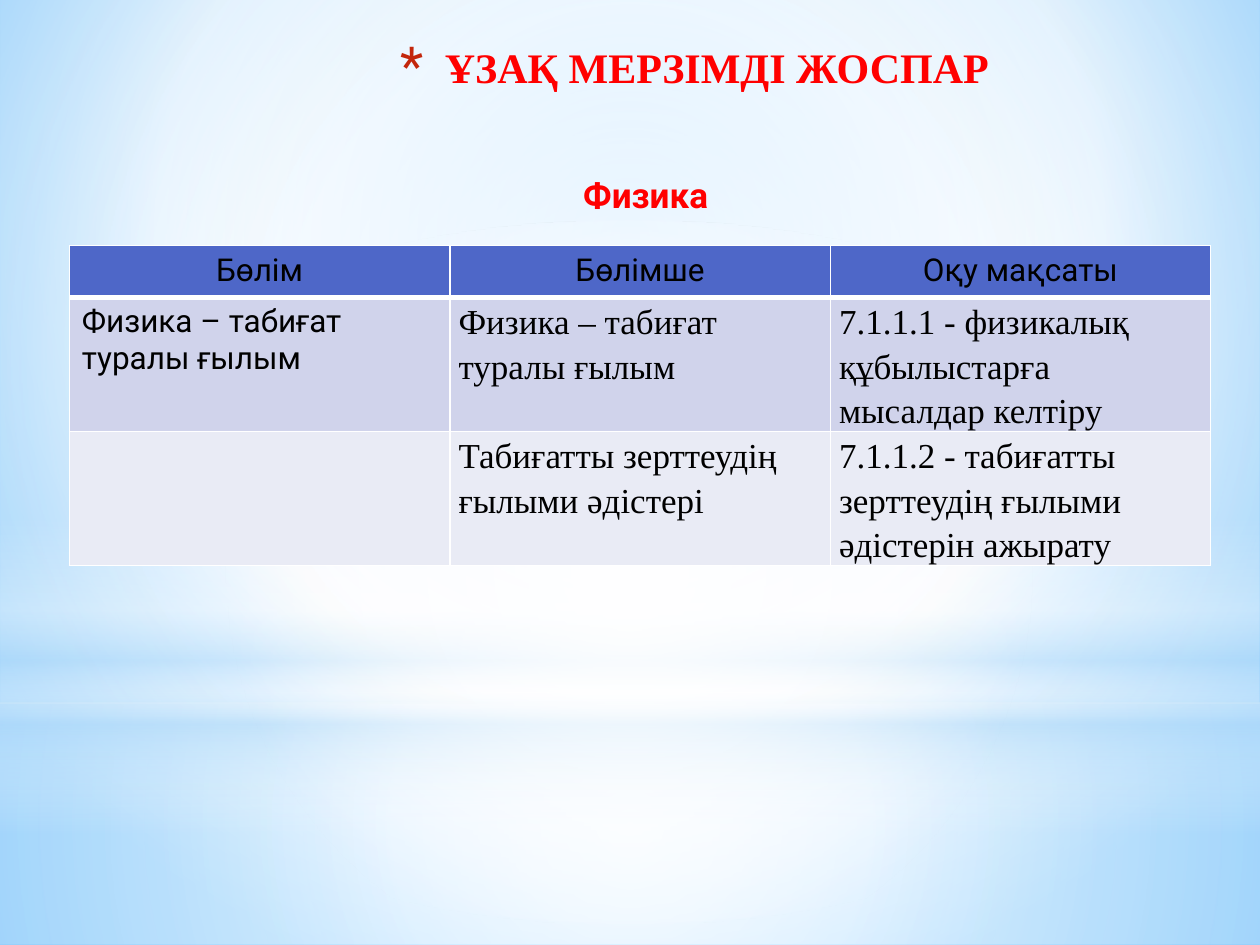
from dataclasses import dataclass
from typing import Optional

from lxml import etree
from pptx import Presentation
from pptx.dml.color import RGBColor
from pptx.enum.shapes import MSO_SHAPE
from pptx.enum.text import MSO_ANCHOR, MSO_AUTO_SIZE, PP_ALIGN
from pptx.oxml import parse_xml
from pptx.oxml.ns import nsdecls, qn
from pptx.util import Inches, Pt

RECTANGLE = MSO_SHAPE.RECTANGLE
OVAL = MSO_SHAPE.OVAL
CENTER = PP_ALIGN.CENTER
LEFT = PP_ALIGN.LEFT
TOP = MSO_ANCHOR.TOP
NO_AUTOFIT = MSO_AUTO_SIZE.NONE

SKY = RGBColor(0x9E, 0xD5, 0xFF)
DEEP_SKY = RGBColor(0x5B, 0xB9, 0xFF)
HAZE = RGBColor(0xB4, 0xDC, 0xFA)
WHITE = RGBColor(0xFF, 0xFF, 0xFF)
BLACK = RGBColor(0x00, 0x00, 0x00)
RED = RGBColor(0xFF, 0x00, 0x00)
BULLET_RED = RGBColor(0xC3, 0x26, 0x0C)
HEADER_BLUE = RGBColor(0x4E, 0x67, 0xC8)
BAND_DARK = RGBColor(0xD0, 0xD3, 0xEB)
BAND_LIGHT = RGBColor(0xE9, 0xEB, 0xF5)

SANS = "Roboto"
SERIF = "Times New Roman"


@dataclass(frozen=True)
class Stop:
    position: int
    color: RGBColor
    opacity: int = 100


@dataclass(frozen=True)
class Gradient:
    stops: tuple[Stop, ...]
    focus: Optional[tuple[int, int, int, int]] = (50, 50, 50, 50)


@dataclass(frozen=True)
class Glow:
    preset: MSO_SHAPE
    top: float
    height: float
    gradient: Gradient


@dataclass(frozen=True)
class CellStyle:
    font: str
    size: int
    align: PP_ALIGN = LEFT
    spacing: float = 1.0
    margin_x: float = 0.1
    margin_y: float = 0.05


BACKDROP = Gradient((Stop(0, SKY), Stop(60, WHITE), Stop(100, DEEP_SKY)), (20, 10, 20, 60))
GLOWS = (
    Glow(RECTANGLE, 5.58, 1.92, Gradient((Stop(0, WHITE, 91), Stop(37, WHITE, 76), Stop(100, HAZE, 79)))),
    Glow(RECTANGLE, 0, 5.58, Gradient((Stop(0, WHITE, 89), Stop(48, WHITE, 62), Stop(100, HAZE, 79)))),
    Glow(RECTANGLE, 4.12, 2.5, Gradient((
        Stop(0, WHITE, 0), Stop(29, WHITE, 30), Stop(45, HAZE, 40),
        Stop(55, WHITE, 26), Stop(65, HAZE, 60), Stop(100, WHITE, 0)), None)),
    Glow(OVAL, 1.75, 5.58, Gradient((Stop(0, WHITE), Stop(56, WHITE, 0)))),
)

HEADER = CellStyle(SANS, 18, CENTER)
SECTION = CellStyle(SANS, 18)
DETAIL = CellStyle(SERIF, 20, spacing=1.15, margin_x=0.07, margin_y=0)

PLAN = (
    ("Бөлім", "Бөлімше", "Оқу мақсаты"),
    ("Физика – табиғат туралы ғылым", "Физика – табиғат туралы ғылым",
     "7.1.1.1 - физикалық құбылыстарға мысалдар келтіру"),
    ("", "Табиғатты зерттеудің ғылыми әдістері",
     "7.1.1.2 - табиғатты зерттеудің ғылыми әдістерін ажырату"),
)
ROW_FILLS = (HEADER_BLUE, BAND_DARK, BAND_LIGHT)
ROW_HEIGHTS = (0.41, 1.06, 1.06)
COLUMN_WIDTH = 3.02


def replace_fill(holder, old_tag: str, gradient: Gradient) -> None:
    stops = "".join(
        f'<a:gs pos="{stop.position * 1000}"><a:srgbClr val="{stop.color}">'
        f'<a:alpha val="{stop.opacity * 1000}"/></a:srgbClr></a:gs>'
        for stop in gradient.stops)
    if gradient.focus:
        sides = " ".join(f'{side}="{share * 1000}"' for side, share in zip("ltrb", gradient.focus))
        direction = f'<a:path path="circle"><a:fillToRect {sides}/></a:path>'
    else:
        direction = '<a:lin ang="5400000" scaled="0"/>'
    fill = parse_xml(f'<a:gradFill {nsdecls("a")} rotWithShape="1">'
                     f'<a:gsLst>{stops}</a:gsLst>{direction}</a:gradFill>')
    holder.replace(holder.find(qn(old_tag)), fill)


def add_glow(slide, glow: Glow, depth: int) -> None:
    shape = slide.shapes.add_shape(
        glow.preset, 0, Inches(glow.top), Inches(10), Inches(glow.height))
    shape.shadow.inherit = False
    shape.line.fill.background()
    shape.fill.background()
    replace_fill(shape._element.spPr, "a:noFill", glow.gradient)
    slide.shapes._spTree.insert(2 + depth, shape._element)


def fill_heading(holder, text: str, box: tuple, font: str, size: int,
                 margin: float, indent: float, bullet: str) -> None:
    holder.left, holder.top, holder.width, holder.height = map(Inches, box)
    frame = holder.text_frame
    frame.text = text
    frame.auto_size = NO_AUTOFIT
    frame.vertical_anchor = TOP
    paragraph = frame.paragraphs[0]
    paragraph.alignment = CENTER
    properties = paragraph._p.get_or_add_pPr()
    properties.set("marL", str(Inches(margin)))
    properties.set("indent", str(Inches(indent)))
    for part in parse_xml(f'<a:pPr {nsdecls("a")}>{bullet}</a:pPr>'):
        properties.append(part)
    paragraph.space_before = Pt(0)
    paragraph.font.name = font
    paragraph.font.size = Pt(size)
    paragraph.font.bold = True
    paragraph.font.color.rgb = RED


def fill_cell(cell, text: str, style: CellStyle, color: RGBColor, bottom: int) -> None:
    cell.text = text
    cell.margin_left = cell.margin_right = Inches(style.margin_x)
    cell.margin_top = cell.margin_bottom = Inches(style.margin_y)
    properties = cell._tc.get_or_add_tcPr()
    for side, width in (("L", 1), ("R", 1), ("T", 1), ("B", bottom)):
        border = etree.SubElement(properties, qn(f"a:ln{side}"), w=str(Pt(width)))
        paint = etree.SubElement(border, qn("a:solidFill"))
        etree.SubElement(paint, qn("a:srgbClr"), val=str(WHITE))
    cell.fill.solid()
    cell.fill.fore_color.rgb = color
    paragraph = cell.text_frame.paragraphs[0]
    paragraph.alignment = style.align
    paragraph.line_spacing = style.spacing
    paragraph.font.name = style.font
    paragraph.font.size = Pt(style.size)
    paragraph.font.bold = False
    paragraph.font.color.rgb = BLACK


def add_plan(slide) -> None:
    table = slide.shapes.add_table(
        len(PLAN), len(PLAN[0]), Inches(0.55), Inches(1.95),
        Inches(COLUMN_WIDTH * len(PLAN[0])), Inches(sum(ROW_HEIGHTS))).table
    table.horz_banding = False
    for column in table.columns:
        column.width = Inches(COLUMN_WIDTH)
    for r, (texts, color, height) in enumerate(zip(PLAN, ROW_FILLS, ROW_HEIGHTS)):
        table.rows[r].height = Inches(height)
        styles = (SECTION, DETAIL, DETAIL) if r else (HEADER,) * len(texts)
        for c, (text, style) in enumerate(zip(texts, styles)):
            fill_cell(table.cell(r, c), text, style, color, 1 if r else 3)


def main() -> None:
    deck = Presentation()
    deck.slide_width, deck.slide_height = Inches(10), Inches(7.5)
    slide = deck.slides.add_slide(deck.slide_layouts[1])
    slide.background.fill.solid()
    replace_fill(slide.element.cSld.bg.bgPr, "a:solidFill", BACKDROP)
    for depth, glow in enumerate(GLOWS):
        add_glow(slide, glow, depth)
    asterisk = (f'<a:buClr><a:srgbClr val="{BULLET_RED}"/></a:buClr><a:buSzPct val="128000"/>'
                f'<a:buFont typeface="{SANS}"/><a:buChar char="*"/>')
    fill_heading(slide.shapes.title, "ҰЗАҚ МЕРЗІМДІ ЖОСПАР", (1.53, 0.28, 7.97, 0.87),
                 SERIF, 24, 0.35, -0.35, asterisk)
    fill_heading(slide.placeholders[1], "Физика", (0.5, 1.33, 9, 5.94),
                 SANS, 20, 0.25, 0, "<a:buNone/>")
    add_plan(slide)
    deck.save("out.pptx")


if __name__ == "__main__":
    main()
